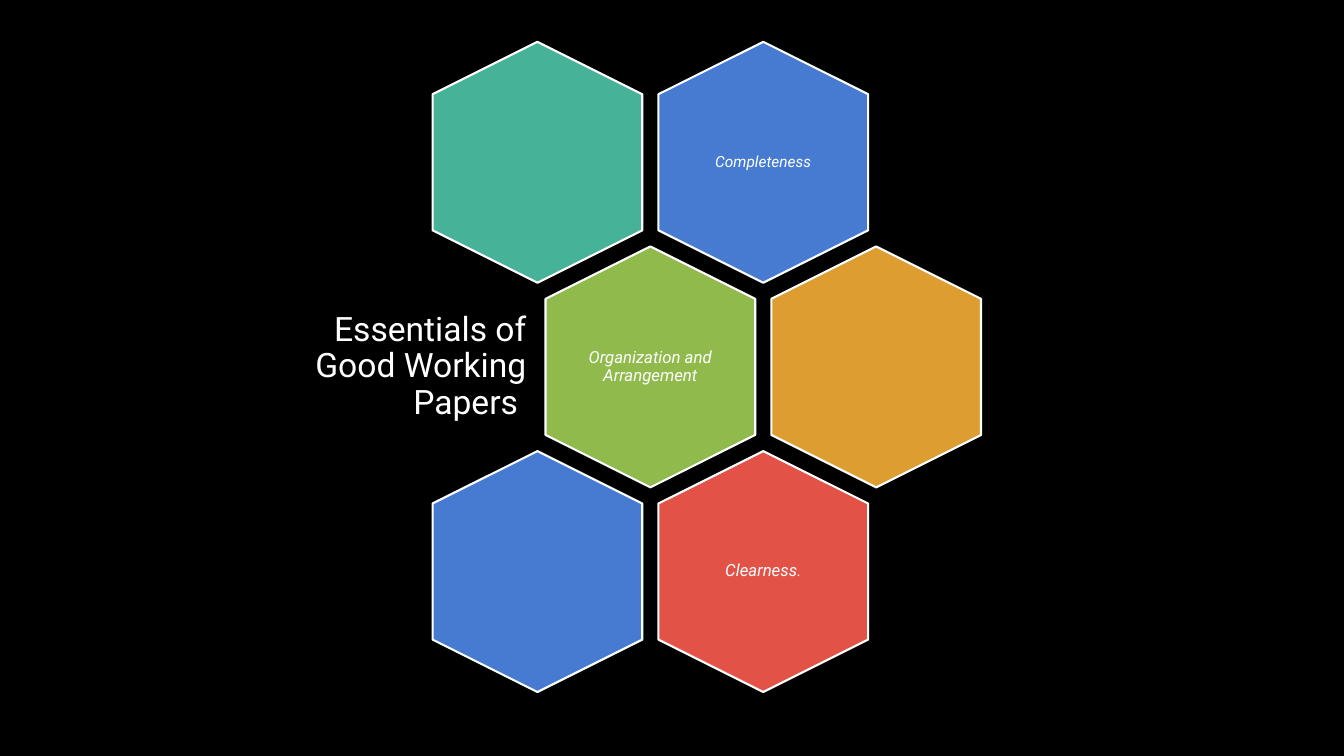
from pptx import Presentation
from pptx.dml.color import RGBColor
from pptx.enum.shapes import MSO_SHAPE as Shape
from pptx.enum.text import MSO_ANCHOR as Anchor, MSO_AUTO_SIZE as AutoSize, PP_ALIGN as Align
from pptx.util import Inches, Pt

COLORS = {
    "background": "000000",
    "white": "FFFFFF",
    "blue": "477BD1",
    "teal": "46B298",
    "green": "90BA4C",
    "orange": "DD9D31",
    "red": "E25247",
}

# Honeycomb grid: centre of the first cell and steps, in inches
FIRST_X, FIRST_Y = 5.33, 1.61
COLUMN, ROW = 1.12, 2.03
HEXAGON_LENGTH, HEXAGON_BREADTH = 2.39, 2.08
LABEL_WIDTH, LABEL_HEIGHT = 1.43, 1.64

# Column, row, colour, label runs as (text, size)
CELLS = [
    (2, 0, "blue", [("Completeness", 11)]),
    (0, 0, "teal", []),
    (1, 1, "green", [("Organization and Arrangement", 12)]),
    (3, 1, "orange", []),
    (2, 2, "red", [("Clearness", 12), (".", 11)]),
    (0, 2, "blue", []),
]


def color(name):
    return RGBColor.from_string(COLORS[name])


def centered_box(column, row, width, height):
    """Left, top, width and height of a box centred on a grid point."""
    left = FIRST_X + column * COLUMN - width / 2
    top = FIRST_Y + row * ROW - height / 2
    return [Inches(length) for length in (left, top, width, height)]


def write_text(shape, runs, align=Align.CENTER, margin=0.05, italic=False):
    frame = shape.text_frame
    frame.word_wrap = True
    frame.auto_size = AutoSize.NONE
    frame.vertical_anchor = Anchor.MIDDLE
    frame.margin_left = frame.margin_right = Inches(margin)
    frame.margin_top = frame.margin_bottom = Inches(margin)
    paragraph = frame.paragraphs[0]
    paragraph.alignment = align
    paragraph.line_spacing = 0.9
    paragraph.space_before = Pt(0)
    for text, size in runs:
        run = paragraph.add_run()
        run.text = text
        run.font.name = "Roboto"
        run.font.size = Pt(size)
        run.font.italic = italic
        run.font.color.rgb = color("white")


def add_hexagon(slide, column, row, fill):
    box = centered_box(column, row, HEXAGON_LENGTH, HEXAGON_BREADTH)
    hexagon = slide.shapes.add_shape(Shape.HEXAGON, *box)
    hexagon.rotation = 90
    hexagon.adjustments[0] = 0.25
    hexagon.shadow.inherit = False
    hexagon.fill.solid()
    hexagon.fill.fore_color.rgb = color(fill)
    hexagon.line.color.rgb = color("white")
    hexagon.line.width = Pt(1.5)


def add_label(slide, column, row, runs):
    box = centered_box(column, row, LABEL_WIDTH, LABEL_HEIGHT)
    write_text(slide.shapes.add_textbox(*box), runs, italic=True)


def place_title(slide, text):
    title = slide.shapes.title
    # The title fills the gap left of the middle row
    title.left, title.top, title.width, title.height = centered_box(-1.16, 1, 2.58, 1.43)
    write_text(title, [(text, 24)], align=Align.RIGHT, margin=0.1)


def main():
    presentation = Presentation()
    presentation.slide_width = Inches(13.33)
    presentation.slide_height = Inches(7.5)
    slide = presentation.slides.add_slide(presentation.slide_layouts[5])
    slide.background.fill.solid()
    slide.background.fill.fore_color.rgb = color("background")

    place_title(slide, "Essentials of Good Working Papers ")

    # Honeycomb
    for column, row, fill, runs in CELLS:
        add_hexagon(slide, column, row, fill)
        if runs:
            add_label(slide, column, row, runs)

    presentation.save("out.pptx")


if __name__ == "__main__":
    main()
